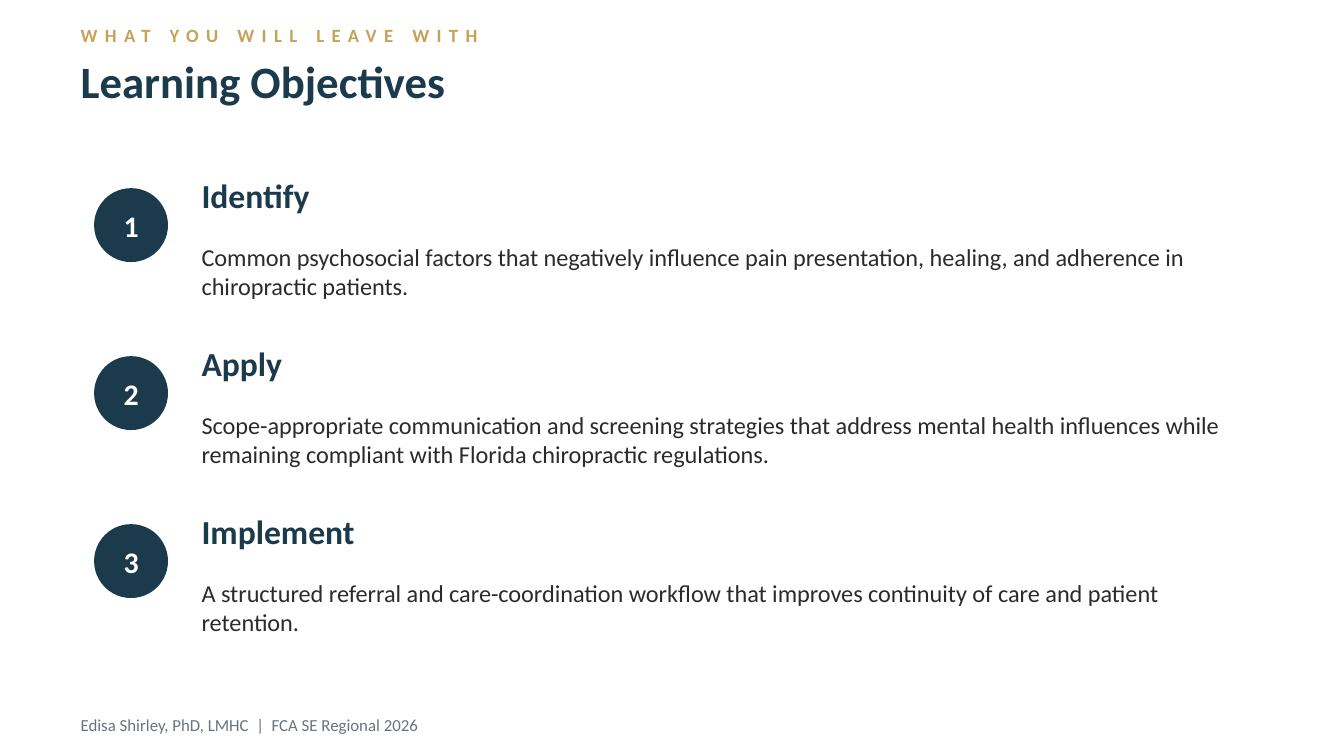
from pptx import Presentation
from pptx.dml.color import RGBColor
from pptx.enum.shapes import MSO_SHAPE as Shape
from pptx.enum.text import MSO_ANCHOR as Anchor, MSO_AUTO_SIZE as Auto, PP_ALIGN as Align
from pptx.util import Inches, Pt

NAVY = RGBColor(0x1B, 0x3A, 0x4B)
GOLD = RGBColor(0xC8, 0xA1, 0x57)
GREY = RGBColor(0x6B, 0x72, 0x80)
INK = RGBColor(0x2B, 0x2B, 0x2B)
WHITE = RGBColor(0xFF, 0xFF, 0xFF)

TITLE = {"size": Pt(24), "bold": True, "color": NAVY}
KICKER = {"size": Pt(10), "bold": True, "color": GOLD}
FOOTER = {"size": Pt(9), "bold": False, "color": GREY}
NUMBER = {"size": Pt(16), "bold": True, "color": WHITE}
HEADING = {"size": Pt(18), "bold": True, "color": NAVY}
BODY = {"size": Pt(13), "bold": False, "color": INK}

GOALS = [
    ("Identify",
     "Common psychosocial factors that negatively influence pain presentation, "
     "healing, and adherence in chiropractic patients."),
    ("Apply",
     "Scope-appropriate communication and screening strategies that address mental "
     "health influences while remaining compliant with Florida chiropractic regulations."),
    ("Implement",
     "A structured referral and care-coordination workflow that improves continuity "
     "of care and patient retention."),
]
WIDTH = 10
TOP = 1.3
STEP = 1.25


def write(shape, text, style, align=Align.LEFT, anchor=Anchor.TOP):
    """Fill a shape with one styled run, without margins, and return the run."""
    frame = shape.text_frame
    setup = {"margin_left": 0, "margin_top": 0, "margin_right": 0, "margin_bottom": 0,
             "word_wrap": True, "auto_size": Auto.NONE, "vertical_anchor": anchor}
    for name, value in setup.items():
        setattr(frame, name, value)
    para = frame.paragraphs[0]
    para.alignment = align
    run = para.add_run()
    run.text = text
    run.font.name = "Calibri"
    for name, value in style.items():
        if name == "color":
            run.font.color.rgb = value
        else:
            setattr(run.font, name, value)
    return run


def add_title(slide, text):
    title = slide.shapes.title
    title.left, title.top = Inches(0.6), Inches(0.4)
    title.width, title.height = Inches(8.8), Inches(0.55)
    write(title, text, TITLE)


def add_text(slide, text, style, left, top, width, height):
    box = slide.shapes.add_textbox(Inches(left), Inches(top), Inches(width), Inches(height))
    return write(box, text, style)


def add_badge(slide, text, left, top, size=0.55):
    badge = slide.shapes.add_shape(
        Shape.OVAL, Inches(left), Inches(top), Inches(size), Inches(size))
    badge.shadow.inherit = False
    badge.fill.solid()
    badge.fill.fore_color.rgb = NAVY
    badge.line.fill.background()
    write(badge, text, NUMBER, Align.CENTER, Anchor.MIDDLE)


def add_goal(slide, number, heading, body, top):
    add_badge(slide, str(number), 0.7, top + 0.1)
    add_text(slide, heading, HEADING, 1.5, top, 7.8, 0.45)
    add_text(slide, body, BODY, 1.5, top + 0.5, 7.8, 0.7)


def main():
    deck = Presentation()
    deck.slide_width, deck.slide_height = Inches(WIDTH), Inches(WIDTH * 9 / 16)
    slide = deck.slides.add_slide(deck.slide_layouts[5])

    add_title(slide, "Learning Objectives")
    kicker = add_text(slide, "WHAT YOU WILL LEAVE WITH", KICKER, 0.6, 0.18, 8.8, 0.25)
    kicker.font._element.set("spc", "400")  # letter spacing of 4 pt
    add_text(slide, "Edisa Shirley, PhD, LMHC  |  FCA SE Regional 2026", FOOTER,
             0.6, 5.32, 8.8, 0.25)
    for i, (heading, body) in enumerate(GOALS):
        add_goal(slide, i + 1, heading, body, TOP + i * STEP)

    deck.save("out.pptx")


if __name__ == "__main__":
    main()
